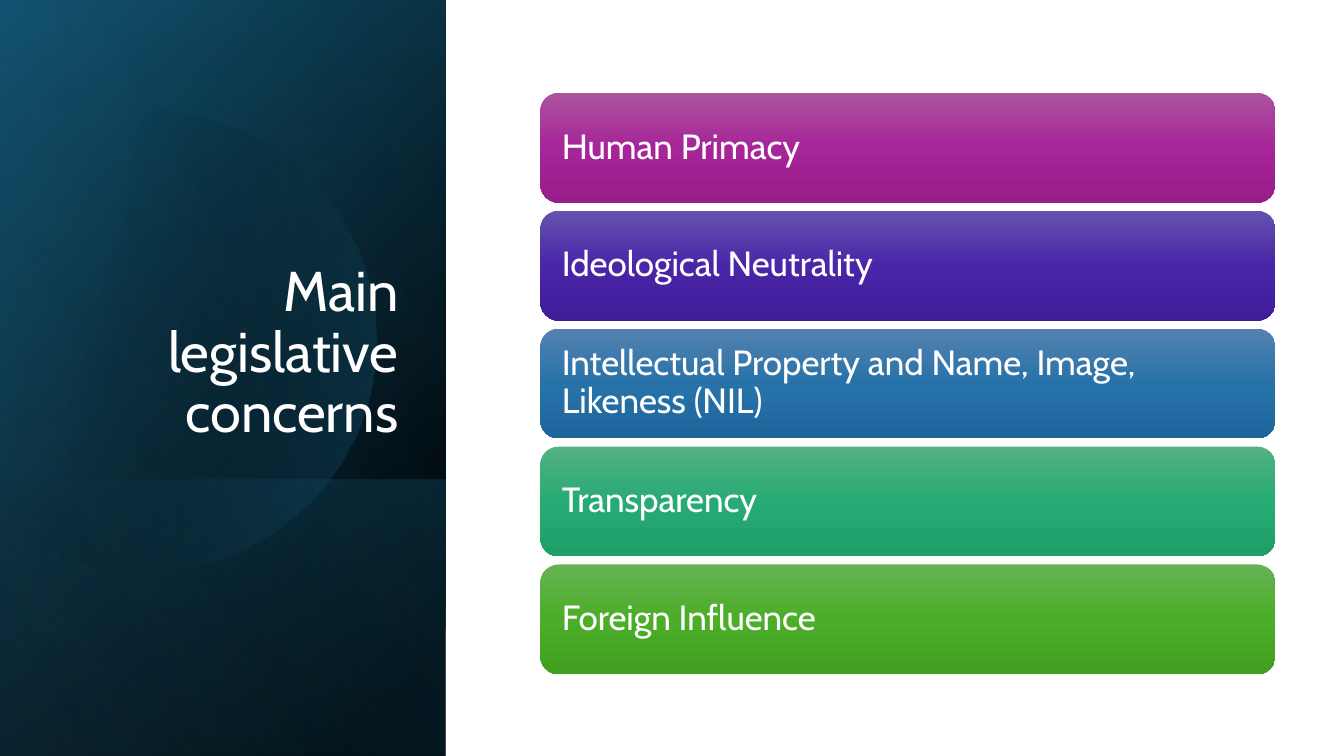
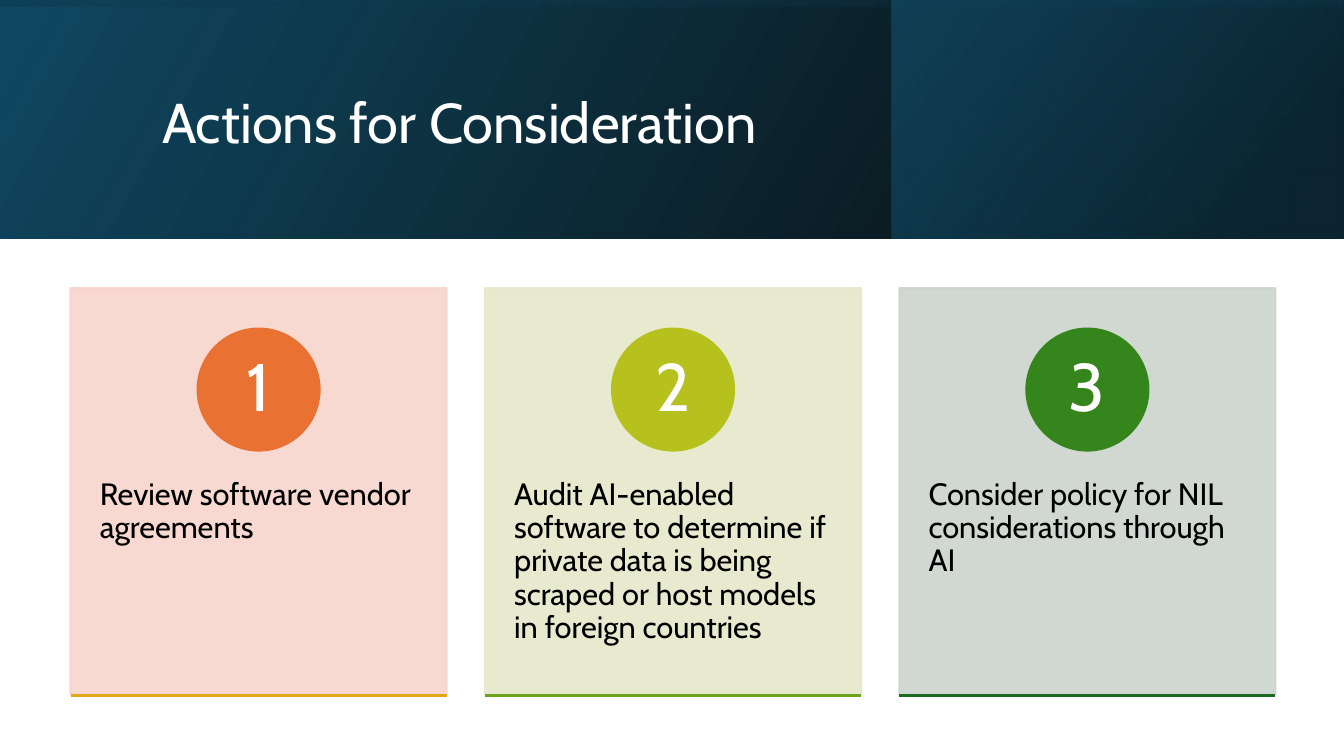
from dataclasses import dataclass
from math import acos, cos, sin

from lxml.etree import SubElement
from pptx import Presentation
from pptx.dml.color import RGBColor
from pptx.enum.shapes import MSO_CONNECTOR as Connector, MSO_SHAPE as Preset
from pptx.enum.text import MSO_ANCHOR as Anchor, PP_ALIGN as Align
from pptx.oxml.ns import qn
from pptx.util import Emu, Pt

PX = 9144  # EMU per px, 100 px to the inch
FONT = "Cabin"
PAGE_WIDTH, PAGE_HEIGHT = 1333, 750
PANEL_WIDTH, BAND_HEIGHT = 442, 237
COLORS = {
    "white": "FFFFFF",
    "black": "000000",
    "navy": "104862",
    "deep": "0B3041",
    "teal": "156082",
    "sky": "46B1E1",
}


@dataclass(frozen=True)
class Stop:
    position: int
    color: str
    alpha: int = 100


@dataclass(frozen=True)
class Layer:
    """A gradient rectangle, placed by the area it covers on the page."""
    left: int
    top: int
    width: int
    height: int
    turn: int
    angle: int
    stops: tuple[Stop, ...]


@dataclass(frozen=True)
class Bar:
    label: str
    shades: tuple[str, str, str]


@dataclass(frozen=True)
class Card:
    text: str
    tint: str
    disc: str
    rule: str


def color_stop(position: int, name: str, alpha: int = 100) -> Stop:
    return Stop(position, COLORS[name], alpha)


PANEL_LAYERS = (
    Layer(0, 0, PANEL_WIDTH, PAGE_HEIGHT, 90, 50,
          (color_stop(8, "black"), color_stop(100, "navy"))),
    Layer(0, 0, PANEL_WIDTH, PAGE_HEIGHT, 90, 30,
          (color_stop(0, "black", 0), color_stop(99, "teal", 46))),
    Layer(0, 476, PANEL_WIDTH, 274, 90, 130,
          (color_stop(2, "teal", 29), color_stop(100, "black", 30))),
)
PANEL_GLOW = Layer(0, 0, PANEL_WIDTH, PAGE_HEIGHT, 90, 120,
                   (color_stop(0, "black", 0), color_stop(99, "sky", 11)))
CIRCLE_STOPS = (color_stop(29, "black", 0), color_stop(100, "teal", 43))
BAND_LAYERS = (
    Layer(0, 0, PAGE_WIDTH, BAND_HEIGHT, 0, 330,
          (color_stop(0, "black", 96), color_stop(100, "navy"))),
    Layer(884, 0, 448, BAND_HEIGHT, 0, 320,
          (color_stop(19, "deep", 68), color_stop(100, "teal", 48))),
    Layer(0, 0, PAGE_WIDTH, BAND_HEIGHT, 270, 350,
          (color_stop(23, "navy", 16), color_stop(99, "black", 45))),
)
BARS = (
    Bar("Human Primacy", ("AC53A0", "A62598", "991C8B")),
    Bar("Ideological Neutrality", ("6553AE", "4926A8", "3E1C9A")),
    Bar("Intellectual Property and Name, Image, Likeness (NIL)",
        ("5382AF", "2772A9", "1D669C")),
    Bar("Transparency", ("54B183", "27AB74", "1E9E68")),
    Bar("Foreign Influence", ("66B354", "4BAD28", "409F1E")),
)
CARDS = (
    Card("Review software vendor agreements", "F7D5CE", "E97132", "E0A61D"),
    Card("Audit AI-enabled software to determine if private data is being "
         "scraped or host models in foreign countries",
         "E5E8CA", "B7C11E", "6BA31D"),
    Card("Consider policy for NIL considerations through AI",
         "CCD4CD", "34861C", "196B24"),
)


def px(*lengths: int) -> list[Emu]:
    return [Emu(length * PX) for length in lengths]


# Fills and outlines
def set_gradient(shape, stops: tuple[Stop, ...], angle: int) -> None:
    shape.shadow.inherit = False
    shape.line.fill.background()
    shape.fill.gradient()
    gradient = shape.element.spPr.find(qn("a:gradFill"))
    gradient.clear()
    gradient.set("rotWithShape", "1")
    stop_list = SubElement(gradient, qn("a:gsLst"))
    for stop in stops:
        entry = SubElement(stop_list, qn("a:gs"), pos=str(stop.position * 1000))
        color = SubElement(entry, qn("a:srgbClr"), val=stop.color)
        if stop.alpha < 100:
            SubElement(color, qn("a:alpha"), val=str(stop.alpha * 1000))
    SubElement(gradient, qn("a:lin"), ang=str(angle * 60000), scaled="0")


def set_solid(shape, color: str, alpha: int = 100) -> None:
    shape.shadow.inherit = False
    shape.fill.solid()
    shape.fill.fore_color.rgb = RGBColor.from_string(color)
    shape.line.color.rgb = RGBColor.from_string(color)
    shape.line.width = Pt(1.5)
    if alpha < 100:
        for element in shape.element.spPr.iter(qn("a:srgbClr")):
            SubElement(element, qn("a:alpha"), val=str(alpha * 1000))


# Text
def write(shape, text: str, size: int, color: str, anchor: Anchor,
          align: Align = Align.LEFT, inset_x: int = 10, inset_y: int = 5,
          inset_top: int | None = None) -> None:
    frame = shape.text_frame
    frame.word_wrap = True
    frame.vertical_anchor = anchor
    frame.margin_left, frame.margin_right = px(inset_x, inset_x)
    top = inset_y if inset_top is None else inset_top
    frame.margin_top, frame.margin_bottom = px(top, inset_y)
    para = frame.paragraphs[0]
    para.alignment = align
    para.line_spacing = 0.9
    span = para.add_run()
    span.text = text
    span.font.name = FONT
    span.font.size = Pt(size)
    span.font.color.rgb = RGBColor.from_string(COLORS[color])


def add_title(page, text: str, left: int, top: int, width: int, height: int,
              anchor: Anchor, align: Align) -> None:
    box = page.shapes.add_textbox(*px(left, top, width, height))
    write(box, text, 40, "white", anchor, align)


# Backgrounds
def add_layer(page, layer: Layer) -> None:
    width, height = layer.width, layer.height
    if layer.turn % 180:
        width, height = height, width
    left = layer.left + (layer.width - width) // 2
    top = layer.top + (layer.height - height) // 2
    shape = page.shapes.add_shape(Preset.RECTANGLE, *px(left, top, width, height))
    shape.rotation = layer.turn
    shape.element.spPr.find(qn("a:xfrm")).set("flipH", "1")
    set_gradient(shape, layer.stops, layer.angle)


def add_cut_circle(page) -> None:
    """A circle cut off by the left edge of the page."""
    center_x, center_y, radius, steps = 144, 338, 229, 120
    reach = acos(-center_x / radius)
    angles = [reach * (2 * step / steps - 1) for step in range(steps + 1)]
    points = [(round(center_x + radius * cos(angle)),
               round(center_y + radius * sin(angle))) for angle in angles]
    builder = page.shapes.build_freeform(*points[0], scale=PX)
    builder.add_line_segments(points[1:], close=True)
    set_gradient(builder.convert_to_shape(), CIRCLE_STOPS, 14)


# Slide contents
def add_bar(page, bar: Bar, index: int) -> None:
    shape = page.shapes.add_shape(
        Preset.ROUNDED_RECTANGLE, *px(536, 92 + 117 * index, 729, 109))
    stops = tuple(Stop(50 * step, shade) for step, shade in enumerate(bar.shades))
    set_gradient(shape, stops, 90)
    write(shape, bar.label, 25, "white", Anchor.MIDDLE, inset_x=16)


def add_card(page, card: Card, index: int) -> None:
    left, top, width, height, disc_size = 70 + 411 * index, 286, 373, 403, 121
    panel = page.shapes.add_shape(Preset.RECTANGLE, *px(left, top, width, height))
    set_solid(panel, card.tint, alpha=90)
    write(panel, card.text, 22, "black", Anchor.TOP, inset_x=29, inset_top=189)

    disc_left = left + (width - disc_size) // 2
    disc = page.shapes.add_shape(
        Preset.OVAL, *px(disc_left, top + 40, disc_size, disc_size))
    set_solid(disc, card.disc)
    write(disc, str(index + 1), 48, "white", Anchor.MIDDLE, Align.CENTER, 9, 1)

    bottom = top + height + 1
    rule = page.shapes.add_connector(
        Connector.STRAIGHT, *px(left, bottom, left + width, bottom))
    rule.line.color.rgb = RGBColor.from_string(card.rule)
    rule.line.width = Pt(1.5)
    SubElement(rule.element.spPr, qn("a:effectLst"))


def build_concerns(page) -> None:
    for layer in PANEL_LAYERS:
        add_layer(page, layer)
    add_cut_circle(page)
    add_layer(page, PANEL_GLOW)
    add_title(page, "Main legislative concerns", 64, 184, 341, 262,
              Anchor.BOTTOM, Align.RIGHT)
    for index, bar in enumerate(BARS):
        add_bar(page, bar, index)


def build_actions(page) -> None:
    for layer in BAND_LAYERS:
        add_layer(page, layer)
    add_title(page, "Actions for Consideration", 151, 38, 1063, 172,
              Anchor.MIDDLE, Align.LEFT)
    for index, card in enumerate(CARDS):
        add_card(page, card, index)


def main() -> None:
    deck = Presentation()
    deck.slide_width, deck.slide_height = px(PAGE_WIDTH, PAGE_HEIGHT)
    blank = deck.slide_layouts[6]
    for build in (build_concerns, build_actions):
        build(deck.slides.add_slide(blank))
    deck.save("out.pptx")


if __name__ == "__main__":
    main()
